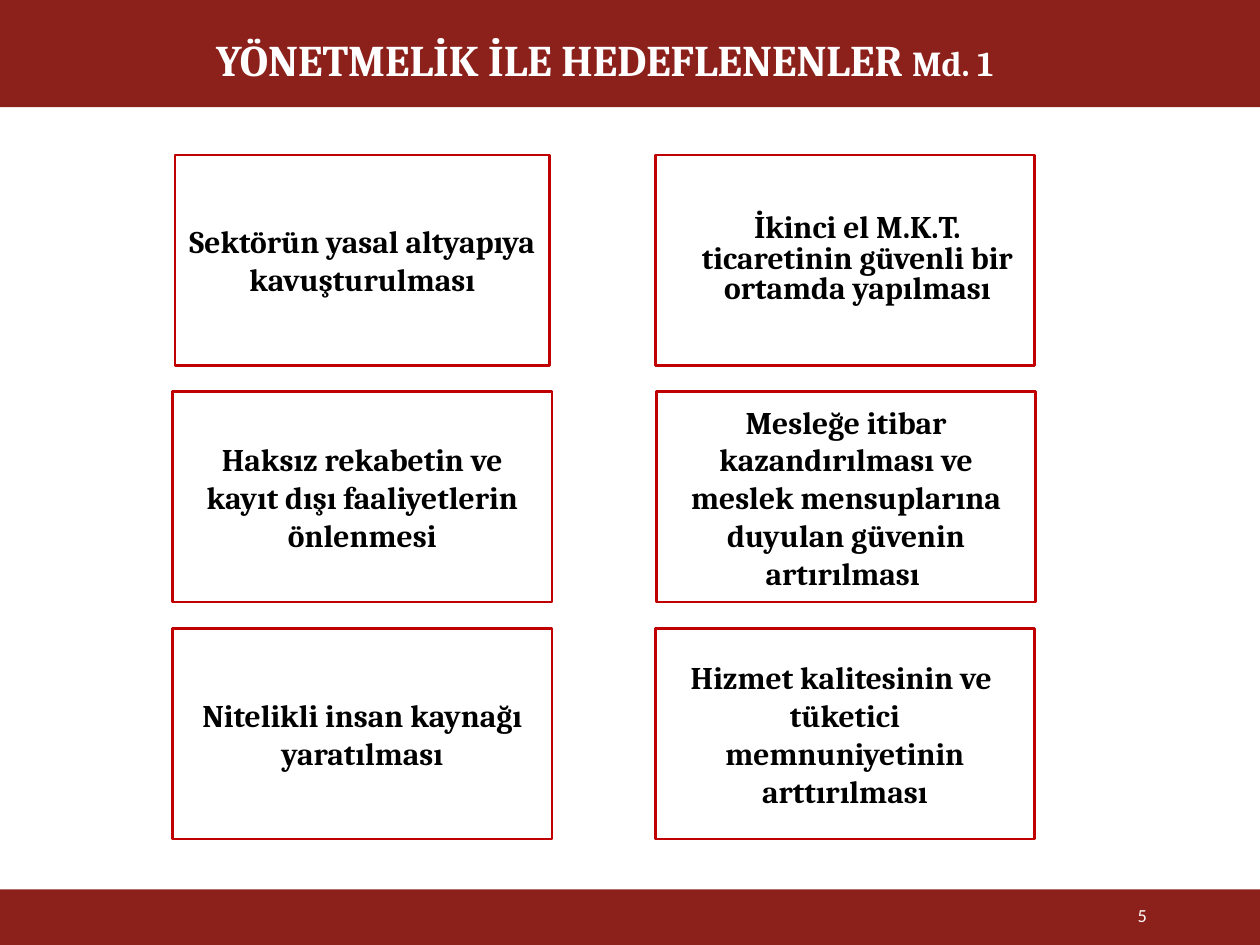
"""Build the slide that lists the goals of the regulation."""
from dataclasses import dataclass

from lxml.etree import SubElement
from pptx import Presentation
from pptx.dml.color import RGBColor
from pptx.enum.shapes import MSO_SHAPE as Shape
from pptx.enum.text import MSO_ANCHOR as Anchor, MSO_AUTO_SIZE as AutoSize, PP_ALIGN as Align
from pptx.oxml.ns import qn
from pptx.util import Inches, Pt

MAROON, RED, WHITE, BLACK = "8C211B", "C00000", "FFFFFF", "000000"
ROW_TOP, ROW_STEP, GOAL_HEIGHT = 1.23, 1.88, 1.67


@dataclass(frozen=True)
class Goal:
    left: float
    row: int
    lines: tuple[str, ...]
    width: float = 3.01
    indent: float = 0
    spacing: float | None = None


GOALS = (
    Goal(1.39, 0, ("Sektörün yasal altyapıya kavuşturulması",), width=2.97),
    Goal(5.2, 0, ("İkinci el M.K.T. ticaretinin güvenli bir ortamda yapılması",),
         indent=0.2, spacing=0.8),
    Goal(1.37, 1, ("Haksız rekabetin ve kayıt dışı faaliyetlerin önlenmesi",)),
    Goal(5.21, 1, ("Mesleğe itibar kazandırılması ve meslek mensuplarına "
                   "duyulan güvenin artırılması ",)),
    Goal(1.37, 2, ("Nitelikli insan kaynağı yaratılması",)),
    Goal(5.2, 2, ("Hizmet kalitesinin ve ", "tüketici memnuniyetinin arttırılması")),
)


def color(value: str) -> RGBColor:
    return RGBColor.from_string(value)


def add_run(paragraph, text: str, size: float, ink: str, font="Cambria", bold=True):
    run = paragraph.add_run()
    run.text = text
    run.font.size = Pt(size)
    run.font.name = font
    run.font.bold = bold
    run.font.color.rgb = color(ink)
    return run


def add_text_shadow(run) -> None:
    effects = SubElement(run.font._element, qn("a:effectLst"))
    run.font.fill._xPr.find(qn("a:solidFill")).addnext(effects)
    shadow = SubElement(effects, qn("a:outerShdw"), blurRad="38100", dist="38100",
                        dir="2700000", algn="tl")
    SubElement(shadow, qn("a:srgbClr"), val=BLACK)


def add_box(slide, left: float, top: float, width: float, height: float,
            fill: str, outline: str | None = None):
    box = slide.shapes.add_shape(
        Shape.RECTANGLE, Inches(left), Inches(top), Inches(width), Inches(height))
    box.shadow.inherit = False
    box.fill.solid()
    box.fill.fore_color.rgb = color(fill)
    if outline:
        box.line.color.rgb = color(outline)
        box.line.width = Pt(1.5)
    else:
        box.line.fill.background()
    return box


def add_goal(slide, goal: Goal) -> None:
    box = add_box(slide, goal.left, ROW_TOP + goal.row * ROW_STEP,
                  goal.width, GOAL_HEIGHT, WHITE, RED)
    frame = box.text_frame
    frame.word_wrap = True
    frame.vertical_anchor = Anchor.MIDDLE
    for index, line in enumerate(goal.lines):
        paragraph = frame.add_paragraph() if index else frame.paragraphs[0]
        paragraph.alignment = Align.CENTER
        if goal.spacing:
            paragraph.line_spacing = goal.spacing
        if goal.indent:
            paragraph._p.get_or_add_pPr().set("marL", str(Inches(goal.indent)))
        add_run(paragraph, line, 18, BLACK)


def add_heading(slide) -> None:
    heading = slide.shapes.title
    heading.left, heading.top = Inches(1.37), Inches(0.21)
    heading.width, heading.height = Inches(6.86), Inches(0.47)
    frame = heading.text_frame
    frame.word_wrap = True
    frame.auto_size = AutoSize.NONE
    frame.vertical_anchor = Anchor.TOP
    paragraph = frame.paragraphs[0]
    paragraph.alignment = Align.CENTER
    for text, size in (("YÖNETMELİK İLE HEDEFLENENLER ", 25), ("Md. 1", 20)):
        add_text_shadow(add_run(paragraph, text, size, WHITE))


def add_page_number(slide) -> None:
    number = slide.shapes.add_textbox(Inches(8.12), Inches(7.06), Inches(1.08), Inches(0.4))
    frame = number.text_frame
    frame.word_wrap = True
    frame.vertical_anchor = Anchor.MIDDLE
    paragraph = frame.paragraphs[0]
    paragraph.alignment = Align.RIGHT
    add_run(paragraph, "5", 10.5, WHITE, font="Calibri", bold=False)


def main() -> None:
    deck = Presentation()
    deck.slide_width, deck.slide_height = Inches(10), Inches(7.5)
    slide = deck.slides.add_slide(deck.slide_layouts[5])
    heading_element = slide.shapes.title._element
    add_box(slide, 0, 7.06, 10, 0.44, MAROON)
    header = add_box(slide, 0, 0, 10, 0.85, MAROON)
    header._element.addnext(heading_element)
    add_heading(slide)
    for goal in GOALS:
        add_goal(slide, goal)
    add_page_number(slide)
    deck.save("out.pptx")


if __name__ == "__main__":
    main()
